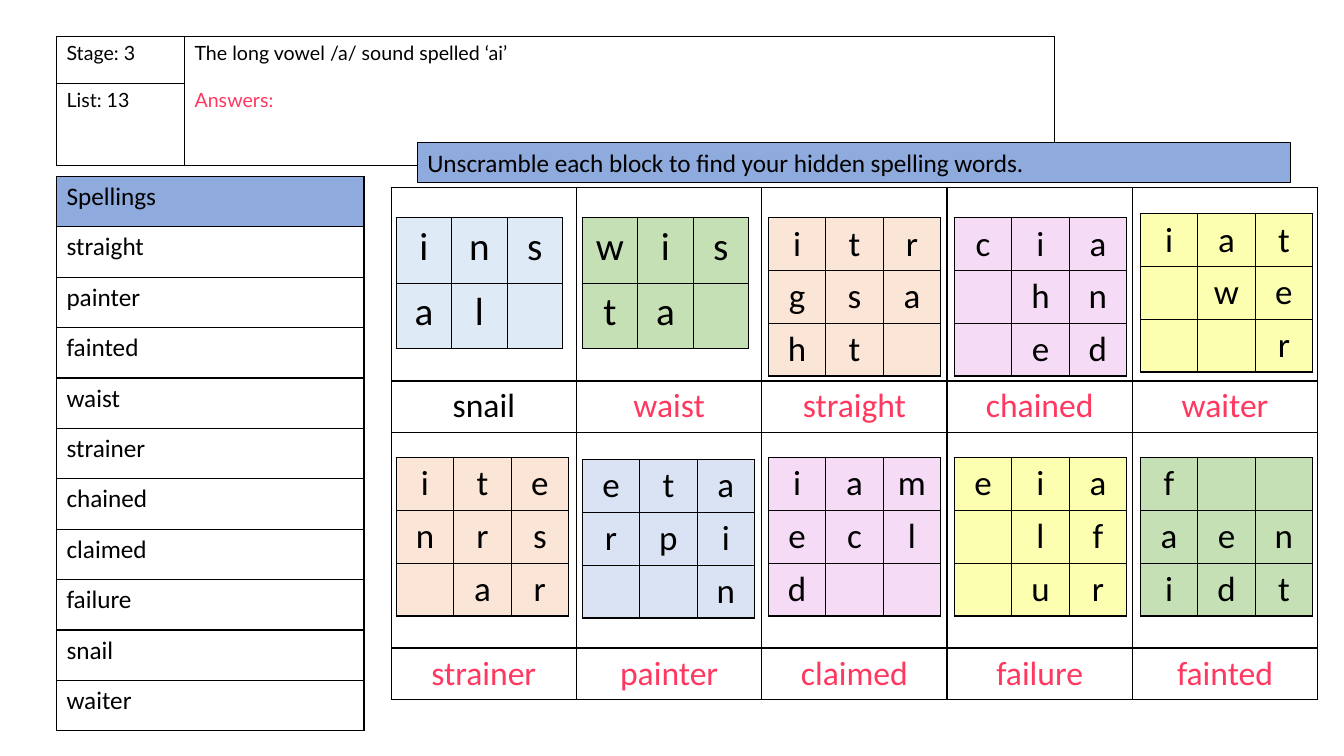
import pptx
import pptx.dml.color
import pptx.enum.shapes
import pptx.enum.text
import pptx.oxml
import pptx.oxml.ns
import pptx.util

Inches, Pt = pptx.util.Inches, pptx.util.Pt
ALIGN = pptx.enum.text.PP_ALIGN

COLORS = {
    "ink": "000000", "answer": "FF3860", "heading": "8FAADC",
    "sky": "DEEBF7", "green": "C5E0B4", "peach": "FBE5D6",
    "pink": "F5DBF6", "yellow": "FBFFAF", "blue": "DAE3F3",
}

SPELLINGS = ["straight", "painter", "fainted", "waist", "strainer", "chained",
             "claimed", "failure", "snail", "waiter"]

# Word, fill and letter rows of each block; a space is an empty cell
BLOCKS = [
    [("snail", "sky", ["ins", "al "]),
     ("waist", "green", ["wis", "ta "]),
     ("straight", "peach", ["itr", "gsa", "ht "]),
     ("chained", "pink", ["cia", " hn", " ed"]),
     ("waiter", "yellow", ["iat", " we", "  r"])],
    [("strainer", "peach", ["ite", "nrs", " ar"]),
     ("painter", "blue", ["eta", "rpi", "  n"]),
     ("claimed", "pink", ["iam", "ecl", "d  "]),
     ("failure", "yellow", ["eia", " lf", " ur"]),
     ("fainted", "green", ["f  ", "aen", "idt"])],
]


def rgb(name):
    return pptx.dml.color.RGBColor.from_string(COLORS[name])


def write(p, text, size=18, font="Calibri", color="ink", align=ALIGN.LEFT):
    p.alignment = align
    r = p.add_run()
    r.text = text
    r.font.size, r.font.name = Pt(size), font
    r.font.color.rgb = rgb(color)


def style_cell(cell, fill=None):
    tcPr = cell._tc.get_or_add_tcPr()
    for side in ("lnL", "lnR", "lnT", "lnB"):
        tcPr.append(pptx.oxml.parse_xml(
            f'<a:{side} {pptx.oxml.ns.nsdecls("a")} w="12700"><a:solidFill>'
            f'<a:srgbClr val="{COLORS["ink"]}"/></a:solidFill></a:{side}>'))
    if fill:
        cell.fill.solid()
        cell.fill.fore_color.rgb = rgb(fill)
    else:
        cell.fill.background()


def add_grid(s, x, y, widths, heights, fill=None):
    table = s.shapes.add_table(len(heights), len(widths), Inches(x), Inches(y),
                               Inches(sum(widths)), Inches(sum(heights))).table
    table.first_row = table.horz_banding = False
    for col, width in zip(table.columns, widths):
        col.width = Inches(width)
    for row, height in zip(table.rows, heights):
        row.height = Inches(height)
    for cell in table.iter_cells():
        style_cell(cell, fill)
    return table


def add_spellings(s, x, y, width, row_height):
    table = add_grid(s, x, y, [width], [row_height] * (len(SPELLINGS) + 1))
    for i, word in enumerate(["Spellings"] + SPELLINGS):
        write(table.cell(i, 0).text_frame.paragraphs[0], word)
    table.cell(0, 0).fill.solid()
    table.cell(0, 0).fill.fore_color.rgb = rgb("heading")


def add_header(s, x, y, widths, heights):
    table = add_grid(s, x, y, widths, heights)
    table.cell(0, 1).merge(table.cell(1, 1))
    for i, label in enumerate(["Stage: 3", "List: 13"]):
        write(table.cell(i, 0).text_frame.paragraphs[0], label, 14, "Lato")
    tf = table.cell(0, 1).text_frame
    write(tf.paragraphs[0], "The long vowel /a/ sound spelled ‘ai’", 14, "Lato")
    p = tf.add_paragraph()
    p.space_before = Pt(17)
    write(p, "Answers:", 14, "Lato", "answer")


def add_block(s, x, y, fill, rows):
    small = len(rows) == 2
    width, height, size = (0.55, 0.65, 28) if small else (0.57, 0.52, 25)
    table = add_grid(s, x, y, [width] * 3, [height] * len(rows), fill)
    for i, letters in enumerate(rows):
        for j, letter in enumerate(letters):
            if letter != " ":
                write(table.cell(i, j).text_frame.paragraphs[0], letter, size,
                      align=ALIGN.CENTER)


def add_puzzles(s, x, y, width):
    heights = [1.92, 0.51, 2.14, 0.51]
    answers = add_grid(s, x, y, [width / 5] * 5, heights)
    block_tops = [y + 0.3, y + 2.68]
    nudges = {"waiter": -0.04, "painter": 0.02}
    for i, blocks in enumerate(BLOCKS):
        for j, (word, fill, rows) in enumerate(blocks):
            color = "ink" if word == "snail" else "answer"
            write(answers.cell(2 * i + 1, j).text_frame.paragraphs[0], word, 24,
                  color=color, align=ALIGN.CENTER)
            add_block(s, x + 0.05 + j * 7.38 / 4,
                      block_tops[i] + nudges.get(word, 0), fill, rows)


def add_banner(s, x, y, width, height):
    sp = s.shapes.add_shape(pptx.enum.shapes.MSO_SHAPE.RECTANGLE, Inches(x),
                            Inches(y), Inches(width), Inches(height))
    sp.shadow.inherit = False
    sp.fill.solid()
    sp.fill.fore_color.rgb = rgb("heading")
    sp.line.color.rgb = rgb("ink")
    sp.line.width = Pt(0.75)
    tf = sp.text_frame
    tf.word_wrap = True
    tf.vertical_anchor = pptx.enum.text.MSO_ANCHOR.TOP
    write(tf.paragraphs[0],
          "Unscramble each block to find your hidden spelling words.")


def main():
    prs = pptx.Presentation()
    prs.slide_width, prs.slide_height = Inches(13.33), Inches(7.5)
    s = prs.slides.add_slide(prs.slide_layouts[6])
    # Word list and lesson details
    add_spellings(s, 0.56, 1.75, 3.05, 0.5)
    add_header(s, 0.56, 0.36, [1.27, 8.63], [0.47, 0.81])
    # Scrambled blocks with their answers, and the instruction
    add_puzzles(s, 3.88, 1.86, 9.19)
    add_banner(s, 4.14, 1.41, 8.66, 0.4)
    prs.save("out.pptx")


if __name__ == "__main__":
    main()
